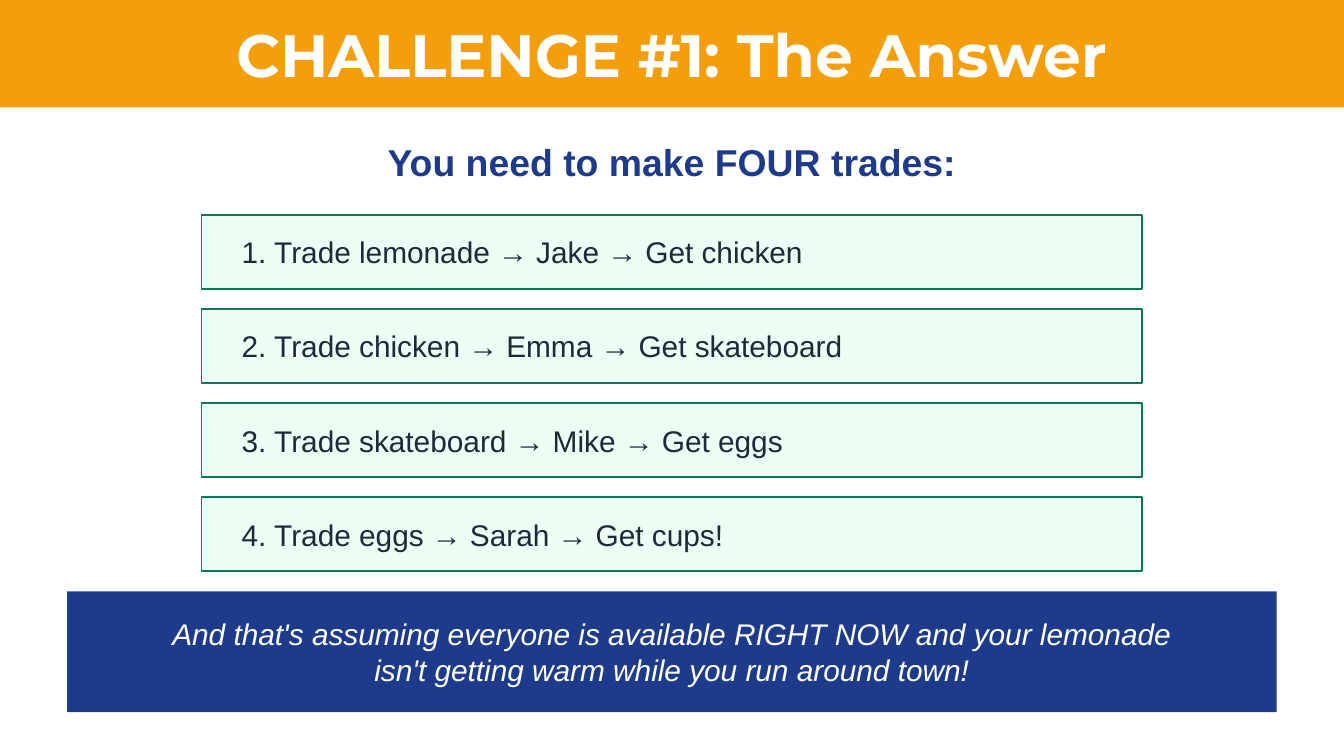
from pptx import Presentation
from pptx.dml.color import RGBColor
from pptx.enum import shapes, text
from pptx.util import Pt

AMBER, NAVY, WHITE = "F59E0B", "1E3A8A", "FFFFFF"
MINT, GREEN, INK = "F0FDF4", "047857", "1F2937"

TRADES = [
    "1. Trade lemonade → Jake → Get chicken",
    "2. Trade chicken → Emma → Get skateboard",
    "3. Trade skateboard → Mike → Get eggs",
    "4. Trade eggs → Sarah → Get cups!",
]


def color(hexa):
    return RGBColor.from_string(hexa)


def add_bar(slide, area, fill, edge=None):
    bar = slide.shapes.add_shape(
        shapes.MSO_SHAPE.RECTANGLE, *(Pt(n) for n in area))
    bar.shadow.inherit = False
    bar.fill.solid()
    bar.fill.fore_color.rgb = color(fill)
    if edge:
        bar.line.color.rgb = color(edge)
        bar.line.width = Pt(1)
    else:
        bar.line.fill.background()


def add_label(slide, area, words, hue, align="CENTER", **style):
    frame = slide.shapes.add_textbox(*(Pt(n) for n in area)).text_frame
    frame.word_wrap = True
    frame.vertical_anchor = text.MSO_ANCHOR.MIDDLE
    para = frame.paragraphs[0]
    para.alignment = text.PP_ALIGN[align]
    run = para.add_run()
    run.text = words
    run.font.color.rgb = color(hue)
    for key, value in ({"name": "Arial", "size": Pt(16)} | style).items():
        setattr(run.font, key, value)


def main():
    deck = Presentation()
    deck.slide_width, deck.slide_height = Pt(720), Pt(405)
    slide = deck.slides.add_slide(deck.slide_layouts[6])

    # Title band
    add_bar(slide, (0, 0, 720, 57.6), AMBER)
    add_label(slide, (36, 10.8, 648, 36), "CHALLENGE #1: The Answer", WHITE,
              name="Montserrat", size=Pt(32), bold=True)

    # Heading
    add_label(slide, (36, 72, 648, 28.8), "You need to make FOUR trades:",
              NAVY, size=Pt(20), bold=True)

    # Trade steps
    for i, trade in enumerate(TRADES):
        top = 115.2 + i * 50.4
        add_bar(slide, (108, top, 504, 39.6), MINT, GREEN)
        add_label(slide, (122.4, top + 7.2, 475.2, 25.2), trade, INK, "LEFT")

    # Closing remark
    add_bar(slide, (36, 316.8, 648, 64.8), NAVY)
    add_label(slide, (72, 327.6, 576, 43.2),
              "And that's assuming everyone is available RIGHT NOW and your "
              "lemonade isn't getting warm while you run around town!",
              WHITE, italic=True)

    deck.save("out.pptx")


if __name__ == "__main__":
    main()
